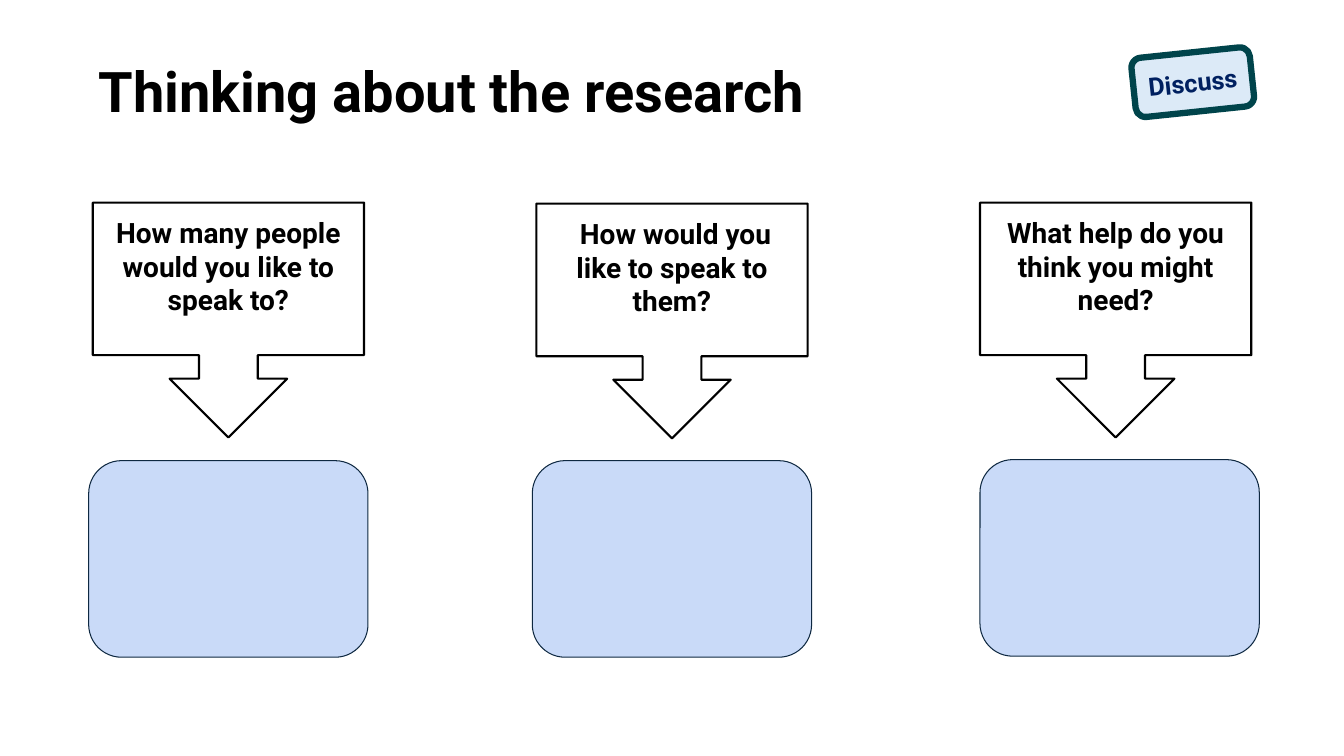
from pptx import Presentation
from pptx.util import Inches, Pt
from pptx.dml.color import RGBColor
from pptx.enum.shapes import MSO_SHAPE as Kind
from pptx.enum.text import MSO_ANCHOR as Anchor, PP_ALIGN as Align


def color(code):
    return RGBColor.from_string(code)


def add_box(kind, place, fill, line, width):
    box = slide.shapes.add_shape(kind, *[Inches(n) for n in place])
    box.shadow.inherit = False
    box.fill.solid()
    box.fill.fore_color.rgb = color(fill)
    box.line.color.rgb = color(line)
    box.line.width = Pt(width)
    return box


def add_text(frame, text, size, ink, align, anchor):
    frame.word_wrap = True
    frame.vertical_anchor = anchor
    para = frame.paragraphs[0]
    para.text = text
    para.alignment = align
    font = para.font
    font.name = "Roboto"
    font.size = Pt(size)
    font.bold = True
    font.color.rgb = color(ink)
    return para


deck = Presentation()
deck.slide_width = Inches(13.33)
deck.slide_height = Inches(7.5)
slide = deck.slides.add_slide(deck.slide_layouts[6])

title = slide.shapes.add_textbox(Inches(0.88), Inches(0.6), Inches(12.41), Inches(0.68))
head = add_text(title.text_frame, "Thinking about the research", 40, "000000", Align.LEFT, Anchor.MIDDLE)
head.line_spacing = 0.9

columns = [
    ("How many people would you like to speak to?", 0.92, 2.01, 0.88, 4.57),
    (" How would you like to speak to them?", 5.32, 2.02, 5.28, 4.57),
    ("What help do you think you might need?", 9.72, 2.01, 9.72, 4.56),
]
for text, left, top, x, y in columns:
    call = add_box(Kind.DOWN_ARROW_CALLOUT, (left, top, 2.69, 2.33), "FFFFFF", "000000", 1.5)
    for i, ratio in enumerate((0.25, 0.25, 0.25, 0.65)):
        call.adjustments[i] = ratio
    frame = call.text_frame
    frame.margin_left = frame.margin_right = Inches(0.13)
    frame.margin_top = frame.margin_bottom = Inches(0.13)
    add_text(frame, text, 20, "000000", Align.CENTER, Anchor.TOP)
    add_box(Kind.ROUNDED_RECTANGLE, (x, y, 2.77, 1.95), "C9DAF8", "0E2841", 0.75)

badge = add_box(Kind.ROUNDED_RECTANGLE, (11.24, 0.52, 1.18, 0.59), "DCEAF7", "00444B", 4.5)
badge.rotation = 354
add_text(badge.text_frame, "Discuss", 18, "002060", Align.CENTER, Anchor.MIDDLE)

deck.save("out.pptx")
